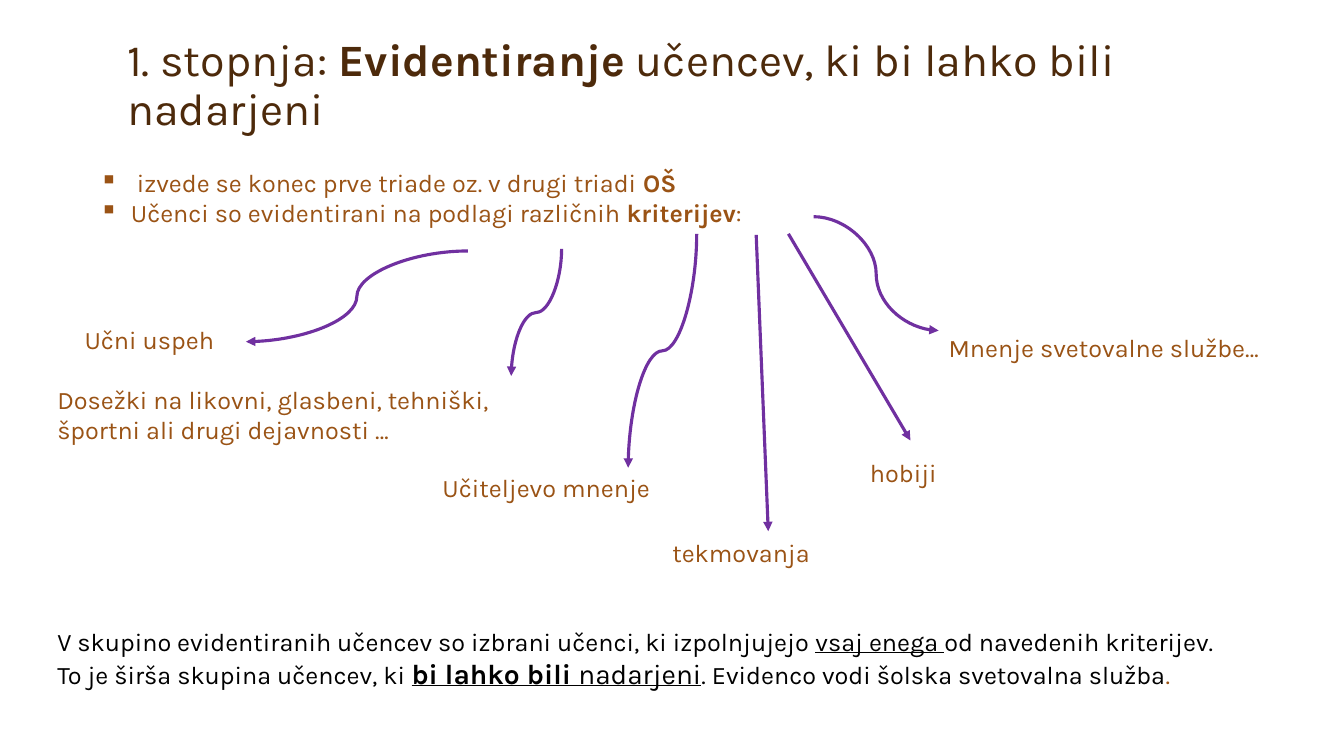
from dataclasses import dataclass

from lxml.etree import SubElement
from pptx import Presentation
from pptx.dml.color import RGBColor
from pptx.enum.shapes import MSO_CONNECTOR
from pptx.enum.text import MSO_ANCHOR, MSO_AUTO_SIZE, PP_ALIGN
from pptx.oxml.ns import qn
from pptx.slide import Slide
from pptx.text.text import TextFrame, _Paragraph
from pptx.util import Inches, Pt


@dataclass(frozen=True)
class Theme:
    font: str = "Karla"
    title_color: str = "4D2A0B"
    body_color: str = "9A5315"
    summary_color: str = "000000"
    arrow_color: str = "7030A0"
    title_size: float = 32
    emphasis_size: float = 20
    body_size: float = 18
    arrow_width: float = 2.25


THEME = Theme()


@dataclass(frozen=True)
class Run:
    text: str
    bold: bool = False
    underline: bool = False
    size: float = THEME.body_size
    color: str = THEME.body_color


@dataclass(frozen=True)
class TextBlock:
    left: float
    top: float
    width: float
    height: float
    paragraphs: list[list[Run]]
    wrap: bool = True
    bulleted: bool = False


@dataclass(frozen=True)
class Arrow:
    start: tuple[float, float]
    end: tuple[float, float]
    curved: bool = False
    leaves_downward: bool = False


def criterion(left: float, top: float, width: float, text: str) -> TextBlock:
    return TextBlock(left, top, width, 0.4, [[Run(text)]])


TITLE = [
    Run("1. stopnja: ", size=THEME.title_size, color=THEME.title_color),
    Run("Evidentiranje", bold=True, size=THEME.title_size, color=THEME.title_color),
    Run(" učencev, ki bi lahko bili nadarjeni", size=THEME.title_size, color=THEME.title_color),
]

INTRODUCTION = TextBlock(0.89, 1.61, 11.76, 0.71, [
    [Run(" izvede se konec prve triade oz. v drugi triadi"), Run(" OŠ", bold=True)],
    [Run("Učenci so evidentirani na podlagi različnih "), Run("kriterijev", bold=True), Run(":")],
], bulleted=True)

CRITERIA = [
    criterion(0.74, 3.17, 2.08, "Učni uspeh"),
    TextBlock(0.47, 3.76, 5, 0.71, [
        [Run("Dosežki na likovni, glasbeni, tehniški,")],
        [Run("športni ali drugi dejavnosti …")],
    ], wrap=False),
    criterion(4.29, 4.64, 3.28, "Učiteljevo mnenje"),
    criterion(6.57, 5.28, 3.08, "tekmovanja"),
    criterion(8.53, 4.49, 2.15, "hobiji"),
    criterion(9.31, 3.25, 3.62, "Mnenje svetovalne službe…"),
]

ARROWS = [
    Arrow((4.64, 2.49), (2.44, 3.39), curved=True),
    Arrow((5.57, 2.47), (5.07, 3.73), curved=True, leaves_downward=True),
    Arrow((6.91, 2.32), (6.23, 4.64), curved=True, leaves_downward=True),
    Arrow((7.5, 2.33), (7.62, 5.27)),
    Arrow((7.82, 2.32), (9.03, 4.37)),
    Arrow((8.07, 2.15), (9.31, 3.28), curved=True),
]

SUMMARY = TextBlock(0.47, 6.16, 11.93, 1.04, [[
    Run("V skupino evidentiranih učencev so izbrani učenci, ki izpolnjujejo ",
        color=THEME.summary_color),
    Run("vsaj enega ", underline=True, color=THEME.summary_color),
    Run("od navedenih kriterijev. To je širša skupina učencev, ki ", color=THEME.summary_color),
    Run("bi lahko bili ", bold=True, underline=True, size=THEME.emphasis_size,
        color=THEME.summary_color),
    Run("nadarjeni", underline=True, size=THEME.emphasis_size, color=THEME.summary_color),
    Run(". Evidenco vodi šolska svetovalna služba", color=THEME.summary_color),
    Run("."),
]])


def add_runs(paragraph: _Paragraph, runs: list[Run]) -> None:
    for part in runs:
        run = paragraph.add_run()
        run.text = part.text
        run.font.name = THEME.font
        run.font.size = Pt(part.size)
        run.font.bold = part.bold
        run.font.underline = part.underline
        run.font.color.rgb = RGBColor.from_string(part.color)


def add_bullet(paragraph: _Paragraph) -> None:
    properties = paragraph._p.get_or_add_pPr()
    properties.set("marL", str(Inches(0.31)))
    properties.set("indent", str(-Inches(0.31)))
    SubElement(properties, qn("a:buChar"), char="▪")


def fill_paragraphs(frame: TextFrame, block: TextBlock) -> None:
    for index, runs in enumerate(block.paragraphs):
        paragraph = frame.add_paragraph() if index else frame.paragraphs[0]
        if block.bulleted:
            add_bullet(paragraph)
        add_runs(paragraph, runs)


def add_text_block(slide: Slide, block: TextBlock) -> None:
    box = slide.shapes.add_textbox(
        Inches(block.left), Inches(block.top), Inches(block.width), Inches(block.height))
    box.text_frame.word_wrap = block.wrap
    box.text_frame.auto_size = MSO_AUTO_SIZE.SHAPE_TO_FIT_TEXT
    fill_paragraphs(box.text_frame, block)


def add_arrow(slide: Slide, arrow: Arrow) -> None:
    """Draw an arrow; one leaving downward is laid flat, then turned a quarter clockwise."""
    (x1, y1), (x2, y2) = arrow.start, arrow.end
    if arrow.leaves_downward:
        center_x, center_y = (x1 + x2) / 2, (y1 + y2) / 2
        half_drop, half_shift = (y2 - y1) / 2, (x1 - x2) / 2
        x1, x2 = center_x - half_drop, center_x + half_drop
        y1, y2 = center_y - half_shift, center_y + half_shift
    kind = MSO_CONNECTOR.CURVE if arrow.curved else MSO_CONNECTOR.STRAIGHT
    connector = slide.shapes.add_connector(kind, Inches(x1), Inches(y1), Inches(x2), Inches(y2))
    connector.line.color.rgb = RGBColor.from_string(THEME.arrow_color)
    connector.line.width = Pt(THEME.arrow_width)
    properties = connector._element.spPr
    if arrow.leaves_downward:
        properties.find(qn("a:xfrm")).set("rot", str(90 * 60000))
    SubElement(properties.find(qn("a:ln")), qn("a:tailEnd"), type="triangle")
    SubElement(properties, qn("a:effectLst"))


def set_title(slide: Slide) -> None:
    title = slide.shapes.title
    title.left, title.top = Inches(1.16), Inches(0.15)
    title.width, title.height = Inches(11), Inches(1.24)
    frame = title.text_frame
    frame.word_wrap = True
    frame.auto_size = MSO_AUTO_SIZE.NONE
    frame.vertical_anchor = MSO_ANCHOR.BOTTOM
    heading = frame.paragraphs[0]
    heading.alignment = PP_ALIGN.LEFT
    heading.line_spacing = 0.9
    add_runs(heading, TITLE)


def main() -> None:
    presentation = Presentation()
    presentation.slide_width, presentation.slide_height = Inches(13.33), Inches(7.5)
    slide = presentation.slides.add_slide(presentation.slide_layouts.get_by_name("Title Only"))
    set_title(slide)
    for block in [INTRODUCTION, *CRITERIA]:
        add_text_block(slide, block)
    for arrow in ARROWS:
        add_arrow(slide, arrow)
    add_text_block(slide, SUMMARY)
    presentation.save("out.pptx")


if __name__ == "__main__":
    main()
